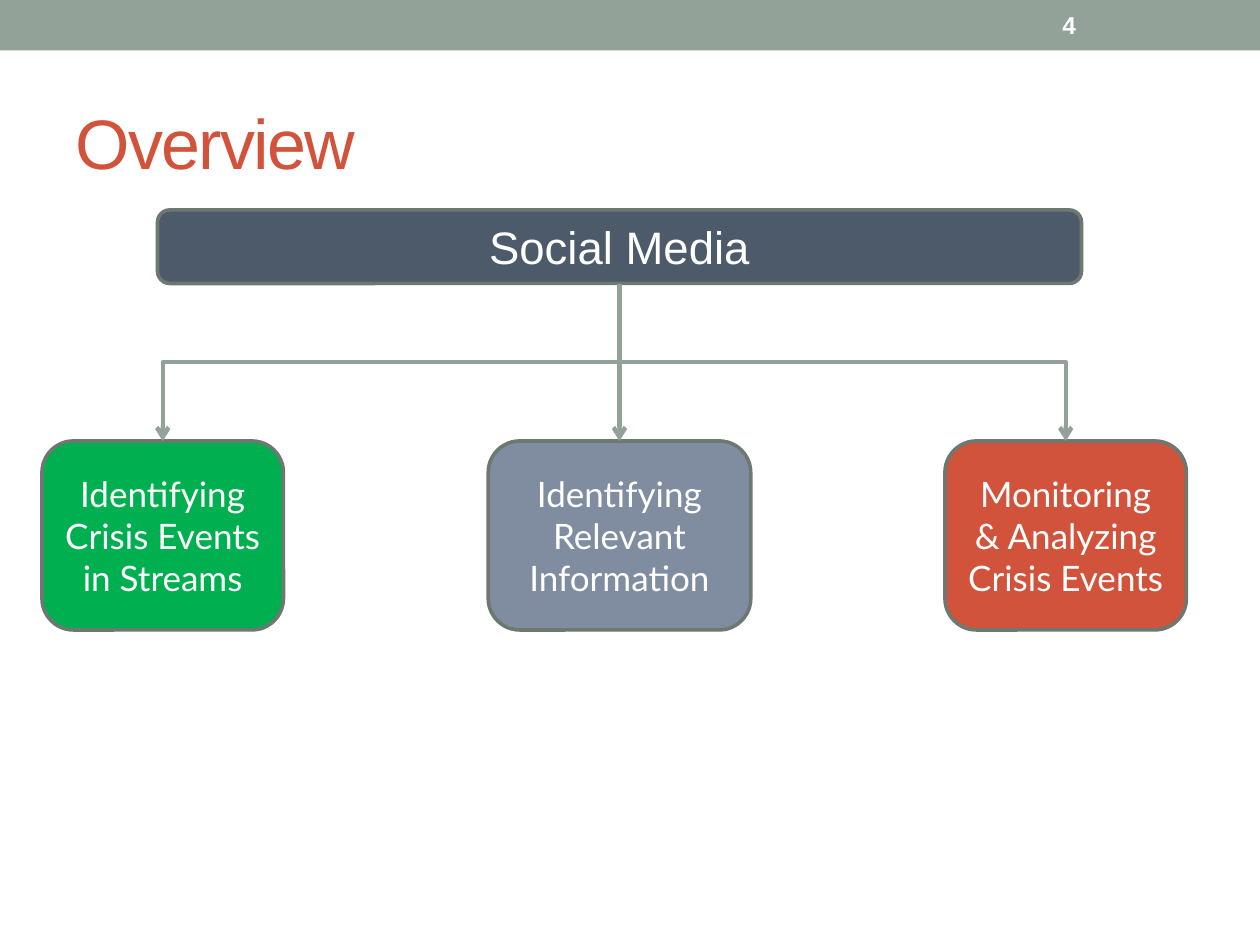
from dataclasses import dataclass
from lxml.etree import SubElement
from pptx import Presentation
from pptx.dml.color import RGBColor
from pptx.enum.shapes import MSO_CONNECTOR, MSO_SHAPE
from pptx.enum.text import MSO_ANCHOR, PP_ALIGN
from pptx.oxml.ns import qn
from pptx.util import Inches, Pt


@dataclass(frozen=True)
class Theme:
    sage: str = "93A299"
    edge: str = "6D7871"
    slate: str = "4C5A6A"
    steel: str = "808DA0"
    red: str = "D2533C"
    green: str = "00B050"
    white: str = "FFFFFF"
    head: str = "Arial"
    body: str = "Lato"
    title: int = 40
    root: int = 26
    leaf: int = 20
    page: int = 14


LOOK = Theme()
COLS, ROWS = 120, 90
WIDE, HIGH = 10, 7.5


def across(cols):
    return Inches(cols * WIDE / COLS)


def down(rows):
    return Inches(rows * HIGH / ROWS)


def frame(box):
    x, y, w, h = box
    return across(x), down(y), across(w), down(h)


def write(shape, text, font, size, color, align=PP_ALIGN.LEFT, bold=False):
    body = shape.text_frame
    body.text = text
    for name, value in {"word_wrap": True, "vertical_anchor": MSO_ANCHOR.MIDDLE}.items():
        setattr(body, name, value)
    para = body.paragraphs[0]
    para.alignment = align
    run = para.runs[0]
    for name, value in {"name": font, "size": Pt(size), "bold": bold}.items():
        setattr(run.font, name, value)
    run.font.color.rgb = RGBColor.from_string(color)
    return run


def block(slide, kind, box, fill, edge=None):
    shape = slide.shapes.add_shape(kind, *frame(box))
    shape.shadow.inherit = False
    shape.fill.solid()
    shape.fill.fore_color.rgb = RGBColor.from_string(fill)
    if edge:
        shape.line.color.rgb = RGBColor.from_string(edge)
        shape.line.width = Pt(2.08)
    else:
        shape.line.fill.background()
    return shape


def node(slide, box, text, fill, font, size):
    shape = block(slide, MSO_SHAPE.ROUNDED_RECTANGLE, box, fill, LOOK.edge)
    write(shape, text, font, size, LOOK.white, PP_ALIGN.CENTER)


def arrow(slide, start, end):
    (x1, y1), (x2, y2) = start, end
    kind, turn = MSO_CONNECTOR.STRAIGHT, 0
    if x1 != x2:
        kind, turn = MSO_CONNECTOR.ELBOW, 90 if x2 < x1 else 270
        midx, midy = (x1 + x2) / 2, (y1 + y2) / 2
        reach = abs(x2 - x1) / 2
        drop = (y2 - y1) / 2 * (1 if x2 > x1 else -1)
        x1, x2 = midx + drop, midx - drop
        y1, y2 = midy - reach, midy + reach
    link = slide.shapes.add_connector(kind, across(x1), down(y1), across(x2), down(y2))
    link.rotation = turn
    link.line.color.rgb = RGBColor.from_string(LOOK.sage)
    link.line.width = Pt(2.5)
    props = link._element.spPr
    SubElement(props.find(qn("a:ln")), qn("a:tailEnd"), type="arrow")
    SubElement(props, qn("a:effectLst"))


def banner(slide, box, page):
    x, y, w, h = box
    block(slide, MSO_SHAPE.RECTANGLE, box, LOOK.sage)
    spot = (x + w * 5 / 6, y + h * 0.05, 14, h * 0.9)
    label = slide.shapes.add_textbox(*frame(spot))
    write(label, page, LOOK.head, LOOK.page, LOOK.white, bold=True)


def heading(slide, box, text):
    title = slide.shapes.title
    for name, value in zip(("left", "top", "width", "height"), frame(box)):
        setattr(title, name, value)
    run = write(title, text, LOOK.head, LOOK.title, LOOK.red)
    run.font._element.set("spc", "-100")


def tree(slide, box, root, leaves):
    x, y, w, h = box
    bar = (x + 11, y, 88, 7)
    hub = (bar[0] + bar[2] / 2, y + bar[3])
    top, tall = y + 22, h - 22
    node(slide, bar, root, LOOK.slate, LOOK.head, LOOK.root)
    for left, wide, text, fill in leaves:
        node(slide, (x + left, top, wide, tall), text, fill, LOOK.body, LOOK.leaf)
        arrow(slide, hub, (x + left + wide / 2, top))


def main():
    deck = Presentation()
    deck.slide_width, deck.slide_height = Inches(WIDE), Inches(HIGH)
    slide = deck.slides.add_slide(deck.slide_layouts[5])
    banner(slide, (0, 0, COLS, 4.8), "4")
    heading(slide, (6, 7, 108, 13), "Overview")
    tree(slide, (4, 20, 109, 40), "Social Media", (
        (0, 23, "Identifying Crisis Events in Streams", LOOK.green),
        (86, 23, "Monitoring & Analyzing Crisis Events", LOOK.red),
        (42.5, 25, "Identifying Relevant Information", LOOK.steel),
    ))
    deck.save("out.pptx")


if __name__ == "__main__":
    main()
